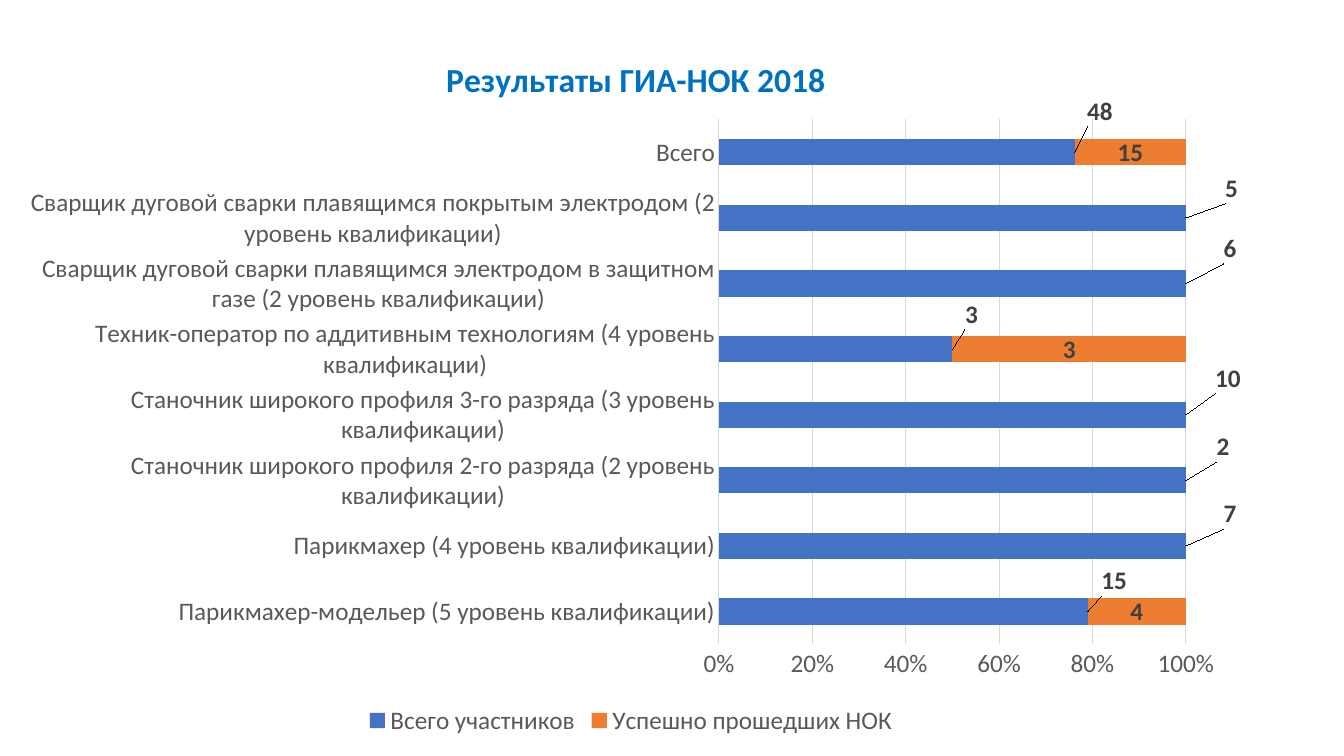
from lxml import etree
from pptx import Presentation
from pptx.chart.data import CategoryChartData
from pptx.dml.color import RGBColor
from pptx.enum.chart import (XL_CHART_TYPE, XL_LABEL_POSITION,
                             XL_LEGEND_POSITION, XL_TICK_MARK)
from pptx.oxml.ns import qn
from pptx.util import Pt

STACKED = XL_CHART_TYPE.BAR_STACKED_100
INSIDE, CENTER = XL_LABEL_POSITION.INSIDE_END, XL_LABEL_POSITION.CENTER
BOTTOM = XL_LEGEND_POSITION.BOTTOM
NO_TICK = XL_TICK_MARK.NONE

BLUE = RGBColor(0x44, 0x72, 0xC4)
ORANGE = RGBColor(0xED, 0x7D, 0x31)
TITLE = RGBColor(0x00, 0x70, 0xC0)
GRAY = RGBColor(0x59, 0x59, 0x59)
DARK = RGBColor(0x40, 0x40, 0x40)
PALE = RGBColor(0xD9, 0xD9, 0xD9)
BLACK = RGBColor(0, 0, 0)

WIDTH, HEIGHT = 872.64, 512.64
LEVEL = "{} ({} уровень квалификации)"
# trade, level, entrants, passed, label shift right and down in points
ROWS = [
    ("Парикмахер-модельер", 5, 15, 4, 31, -22),
    ("Парикмахер", 4, 7, 0, 39, -23),
    ("Станочник широкого профиля 2-го разряда", 2, 2, 0, 34, -24),
    ("Станочник широкого профиля 3-го разряда", 3, 10, 0, 42, -26),
    ("Техник-оператор по аддитивным технологиям", 4, 3, 3, 21, -25),
    ("Сварщик дуговой сварки плавящимся электродом в защитном газе",
     2, 6, 0, 39, -25),
    ("Сварщик дуговой сварки плавящимся покрытым электродом",
     2, 5, 0, 40, -21),
    ("Всего", None, 48, 15, 30, -29),
]


def set_font(font, color, size=18, bold=False):
    values = {"name": "Calibri", "size": Pt(size), "bold": bold}
    for key, value in values.items():
        setattr(font, key, value)
    font.color.rgb = color


def set_line(line, color):
    line.color.rgb = color
    line.width = Pt(0.75)


def place(parent, index, items):
    """Put a manual layout at a child index; numbers are chart points."""
    for old in parent.findall(qn("c:layout")):
        parent.remove(old)
    layout = etree.Element(qn("c:layout"))
    parent.insert(index, layout)
    manual = etree.SubElement(layout, qn("c:manualLayout"))
    for tag, value in items.items():
        if not isinstance(value, str):
            value = str(value / (WIDTH if tag in "xw" else HEIGHT))
        etree.SubElement(manual, qn("c:" + tag)).set("val", value)


def make_data():
    data = CategoryChartData()
    data.categories = [LEVEL.format(row[0], row[1]) if row[1] else row[0]
                       for row in ROWS]
    data.add_series("Всего участников", [row[2] for row in ROWS])
    data.add_series("Успешно прошедших НОК", [row[3] for row in ROWS])
    return data


def set_title(chart):
    chart.has_title = True
    title = chart.chart_title
    title.include_in_layout = False
    run = title.text_frame.paragraphs[0].add_run()
    run.text = "Результаты ГИА-НОК 2018"
    set_font(run.font, TITLE, 24, True)
    place(title._element, 1,
          {"xMode": "edge", "yMode": "edge", "x": 300, "y": 20})


def set_axes(chart):
    for axis in (chart.category_axis, chart.value_axis):
        axis.major_tick_mark = axis.minor_tick_mark = NO_TICK
        set_font(axis.tick_labels.font, GRAY)
    set_line(chart.category_axis.format.line, PALE)
    scale = chart.value_axis
    scale.minimum_scale, scale.maximum_scale, scale.major_unit = 0, 1, 0.2
    scale.tick_labels.number_format = "0%"
    scale.tick_labels.number_format_is_linked = False
    scale.format.line.fill.background()
    scale.has_major_gridlines = True
    set_line(scale.major_gridlines.format.line, PALE)


def set_bars(series, color, spot):
    """Colour the bars and label all values but zeros."""
    series.format.fill.solid()
    series.format.fill.fore_color.rgb = color
    labels = series.data_labels
    values = {"show_value": True, "position": spot, "number_format": "0;;",
              "number_format_is_linked": False}
    for key, value in values.items():
        setattr(labels, key, value)
    set_font(labels.font, DARK, bold=True)


def shift_labels(series):
    for index, row in enumerate(ROWS):
        label = series.points[index].data_label
        set_font(label.font, DARK, bold=True)
        label.position = INSIDE
    tags = series._element.iter(qn("c:dLbl"))
    for tag, row in zip(list(tags), ROWS):
        place(tag, 1, {"x": row[4], "y": row[5]})


def set_legend(chart):
    chart.has_legend = True
    chart.legend.position = BOTTOM
    chart.legend.include_in_layout = False
    set_font(chart.legend.font, GRAY)


def main():
    deck = Presentation()
    deck.slide_width, deck.slide_height = Pt(960), Pt(540)
    slide = deck.slides.add_slide(deck.slide_layouts[6])
    chart = slide.shapes.add_chart(STACKED, Pt(14.4), Pt(16.56), Pt(WIDTH),
                                   Pt(HEIGHT), make_data()).chart
    set_font(chart.font, BLACK)
    set_title(chart)
    set_axes(chart)
    set_legend(chart)
    plot = chart.plots[0]
    plot.gap_width, plot.overlap = 150, 100
    plot.vary_by_categories = False
    total, passed = plot.series
    set_bars(total, BLUE, INSIDE)
    set_bars(passed, ORANGE, CENTER)
    shift_labels(total)
    area = chart._chartSpace.find(".//" + qn("c:plotArea"))
    place(area, 0, {"layoutTarget": "inner", "xMode": "edge",
                    "yMode": "edge", "x": 499.2, "y": 68.8,
                    "w": 333.5, "h": 375})
    deck.save("out.pptx")


if __name__ == "__main__":
    main()
